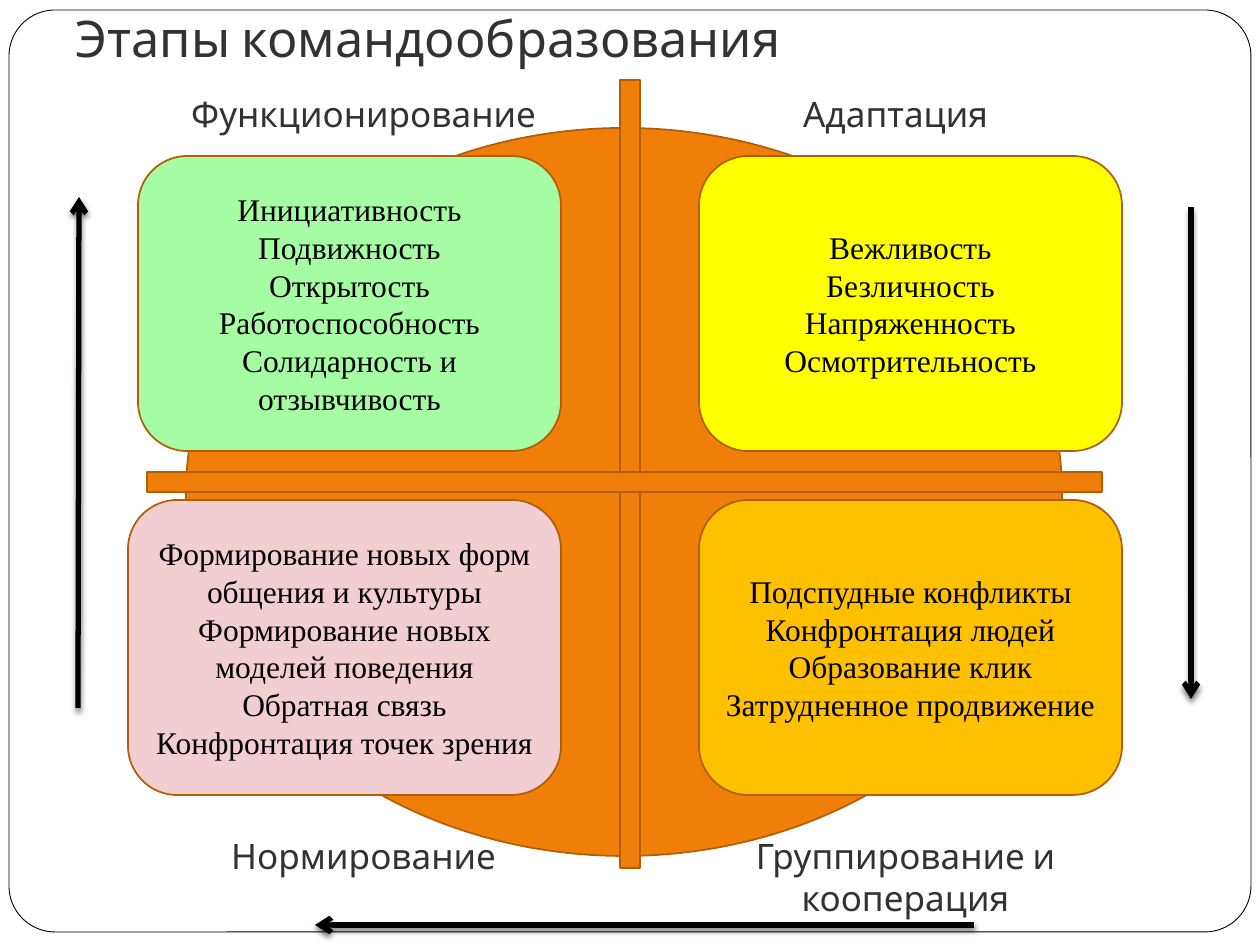
"""Build a slide showing the four stages of team building around a circle."""
from lxml import etree
from pptx import Presentation
from pptx.dml.color import RGBColor
from pptx.enum.shapes import MSO_CONNECTOR, MSO_SHAPE
from pptx.enum.text import MSO_ANCHOR, PP_ALIGN
from pptx.oxml import parse_xml
from pptx.oxml.ns import qn
from pptx.util import Pt

ROUNDED = MSO_SHAPE.ROUNDED_RECTANGLE
RECTANGLE = MSO_SHAPE.RECTANGLE
OVAL = MSO_SHAPE.OVAL
STRAIGHT = MSO_CONNECTOR.STRAIGHT
CENTER, LEFT = PP_ALIGN.CENTER, PP_ALIGN.LEFT
TOP, MIDDLE, BOTTOM = MSO_ANCHOR.TOP, MSO_ANCHOR.MIDDLE, MSO_ANCHOR.BOTTOM

WHITE = RGBColor(0xFF, 0xFF, 0xFF)
BLACK = RGBColor(0, 0, 0)
GRAY = RGBColor(0x32, 0x32, 0x32)
ORANGE = RGBColor(0xF0, 0x7F, 0x09)
BROWN = RGBColor(0xB2, 0x5E, 0x07)
YELLOW = RGBColor(0xFF, 0xFF, 0)
AMBER = RGBColor(0xFF, 0xC0, 0)
PINK = RGBColor(0xF2, 0xCE, 0xD2)
GREEN = RGBColor(0xA6, 0xFC, 0xA2)

HEADING_FONT, BODY_FONT = "Cabin", "Times New Roman"
SCALE = 914400 / 126
BOX_HEIGHT = 295
UPPER_BOX, LOWER_BOX = 156, 500
LABEL_WIDTH, LABEL_HEIGHT = 433, 91
UPPER_LABEL, LOWER_LABEL = 86, 828

TITLE = "Этапы командообразования"
WHEEL = [
    (OVAL, (186, 128, 876, 728)),
    (RECTANGLE, (620, 80, 20, 788)),
    (RECTANGLE, (147, 472, 955, 20)),
]
STAGES = [
    {"name": "Адаптация", "label": (679, UPPER_LABEL), "box": (699, UPPER_BOX, 423), "color": YELLOW,
     "traits": ["Вежливость", "Безличность", "Напряженность", "Осмотрительность"]},
    {"name": "Группирование и кооперация", "label": (689, LOWER_LABEL), "box": (699, LOWER_BOX, 423),
     "color": AMBER,
     "traits": ["Подспудные конфликты", "Конфронтация людей", "Образование клик",
                "Затрудненное продвижение"]},
    {"name": "Нормирование", "label": (147, LOWER_LABEL), "box": (128, LOWER_BOX, 433), "color": PINK,
     "traits": ["Формирование новых форм общения и культуры",
                "Формирование новых моделей поведения", "Обратная связь",
                "Конфронтация точек зрения"]},
    {"name": "Функционирование", "label": (147, UPPER_LABEL), "box": (138, UPPER_BOX, 423), "color": GREEN,
     "traits": ["Инициативность", "Подвижность", "Открытость", "Работоспособность",
                "Солидарность и отзывчивость"]},
]
ARROWS = [(1191, 207, 1191, 699), (78, 708, 79, 197), (974, 925, 315, 925)]
SHADOW = (
    '<a:effectLst xmlns:a="http://schemas.openxmlformats.org/drawingml/2006/main">'
    '<a:outerShdw blurRad="38100" dist="25400" dir="5400000" rotWithShape="0">'
    '<a:srgbClr val="000000"><a:alpha val="50000"/></a:srgbClr>'
    '</a:outerShdw></a:effectLst>'
)


def px(*values):
    return [round(value * SCALE) for value in values]


def write(shape, lines, size, font, color, align=CENTER, anchor=TOP):
    frame = shape.text_frame
    frame.word_wrap = True
    frame.vertical_anchor = anchor
    frame.text = "\n".join(lines)
    for paragraph in frame.paragraphs:
        paragraph.alignment = align
        paragraph.font.size = Pt(size)
        paragraph.font.name = font
        paragraph.font.color.rgb = color


def add_shape(slide, kind, place, fill, line=BROWN, width=1):
    shape = slide.shapes.add_shape(kind, *px(*place))
    shape.shadow.inherit = False
    shape.fill.solid()
    shape.fill.fore_color.rgb = fill
    shape.line.color.rgb = line
    shape.line.width = Pt(width)
    return shape


def add_arrow(slide, ends):
    arrow = slide.shapes.add_connector(STRAIGHT, *px(*ends))
    arrow.line.color.rgb = BLACK
    arrow.line.width = Pt(3)
    etree.SubElement(arrow.line._get_or_add_ln(), qn("a:tailEnd"), type="arrow")
    arrow._element.spPr.append(parse_xml(SHADOW))


def main():
    presentation = Presentation()
    presentation.slide_width, presentation.slide_height = px(1260, 945)
    slide = presentation.slides.add_slide(presentation.slide_layouts[5])

    border = add_shape(slide, ROUNDED, (9, 10, 1242, 922), WHITE, line=BLACK, width=0.5)
    border.adjustments[0] = 0.05
    for kind, place in WHEEL:
        add_shape(slide, kind, place, ORANGE)
    for stage in STAGES:
        box = add_shape(slide, ROUNDED, (*stage["box"], BOX_HEIGHT), stage["color"])
        write(box, stage["traits"], 18, BODY_FONT, BLACK, anchor=MIDDLE)
        label = slide.shapes.add_textbox(*px(*stage["label"], LABEL_WIDTH, LABEL_HEIGHT))
        write(label, [stage["name"]], 20, HEADING_FONT, GRAY)
    for ends in ARROWS:
        add_arrow(slide, ends)

    title = slide.shapes.title
    title.left, title.top, title.width, title.height = px(63, 0, 1134, 81)
    write(title, [TITLE], 28.8, HEADING_FONT, GRAY, align=LEFT, anchor=BOTTOM)
    title.text_frame.margin_bottom = px(13)[0]
    slide.shapes._spTree.append(title._element)
    presentation.save("out.pptx")


if __name__ == "__main__":
    main()
